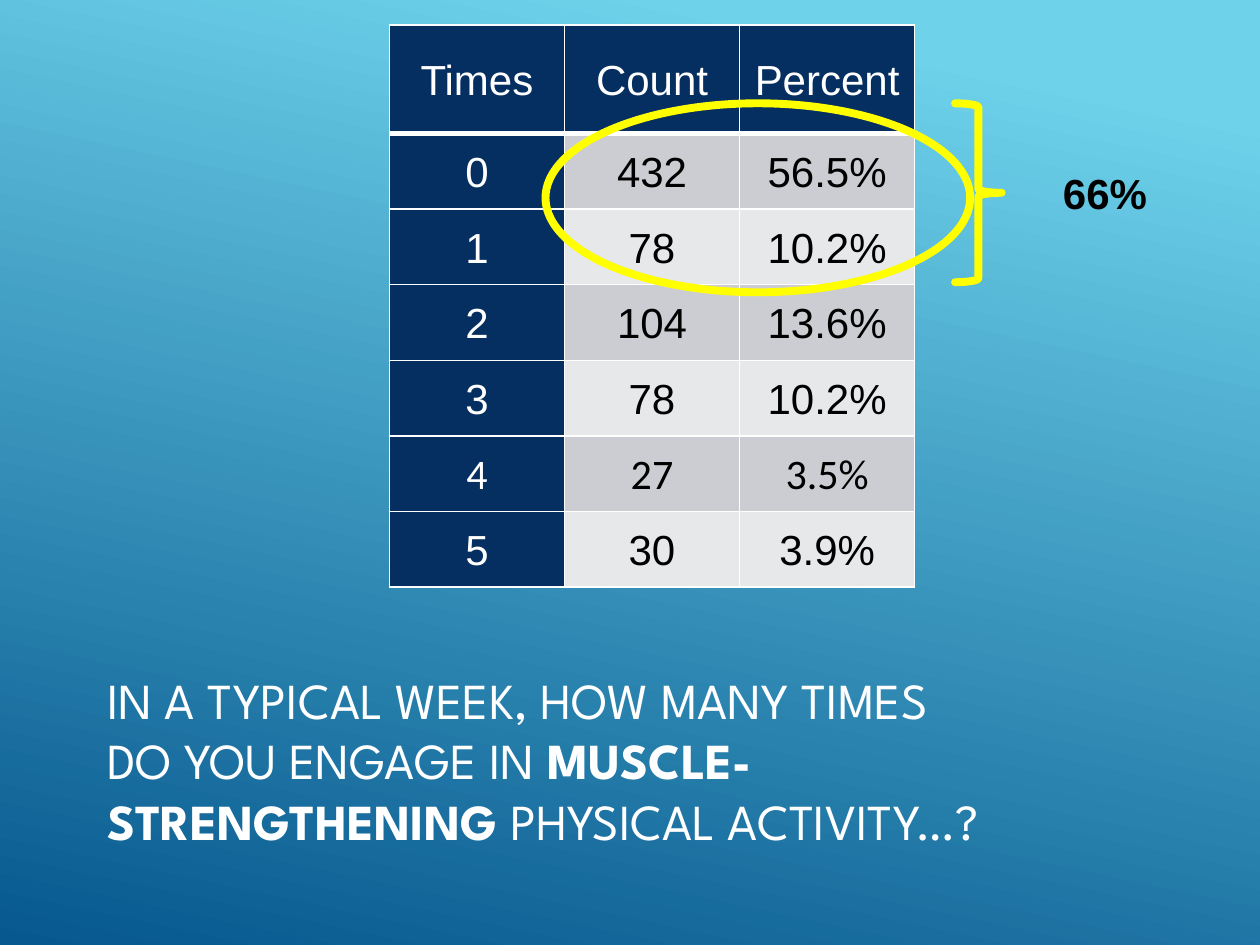
from lxml import etree
from pptx import Presentation
from pptx import util as u
from pptx.dml.color import RGBColor
from pptx.enum import shapes, text
from pptx.oxml.ns import qn

COLORS = {
    "sky": "6ED2EB", "deep": "06588E", "navy": "052F61", "white": "FFFFFF",
    "black": "000000", "band_dark": "CCCDD2", "band_light": "E7E8EA",
    "yellow": "FFFF00",
}


def add_span(para, words, size, font, color, bold=False):
    span = para.add_run()
    span.text = words
    span.font.size = u.Pt(size)
    span.font.name = font
    span.font.bold = bold
    span.font.color.rgb = RGBColor.from_string(COLORS[color])


def add_borders(cell, bottom_width):
    """Draw white rules on all four sides, placed before the cell's fill."""
    properties = cell._tc.get_or_add_tcPr()
    for index, side in enumerate(("lnL", "lnR", "lnT", "lnB")):
        width = bottom_width if side == "lnB" else 1
        line = etree.Element(qn(f"a:{side}"), w=str(u.Pt(width)))
        fill = etree.SubElement(line, qn("a:solidFill"))
        etree.SubElement(fill, qn("a:srgbClr"), val=COLORS["white"])
        properties.insert(index, line)


deck = Presentation()
deck.slide_width, deck.slide_height = u.Inches(10), u.Inches(7.5)
page = deck.slides.add_slide(deck.slide_layouts[5])

# Background
backdrop = page.background.fill
backdrop.gradient()
backdrop.gradient_angle = 360 - 102
for stop, position, color in zip(backdrop.gradient_stops, (0.1, 1), ("sky", "deep")):
    stop.position = position
    stop.color.rgb = RGBColor.from_string(COLORS[color])

# Question
title = page.shapes.title
title.left, title.top = u.Inches(0.75), u.Inches(5.41)
title.width, title.height = u.Inches(7.17), u.Inches(1.67)
frame = title.text_frame
frame.word_wrap = True
frame.auto_size = text.MSO_AUTO_SIZE.NONE
frame.vertical_anchor = text.MSO_ANCHOR.MIDDLE
frame.margin_bottom = u.Inches(0.48)
para = frame.paragraphs[0]
para.alignment = text.PP_ALIGN.LEFT
for words, bold in (
    ("IN A TYPICAL WEEK, HOW MANY TIMES DO YOU ENGAGE IN ", False),
    ("MUSCLE-STRENGTHENING", True),
    (" PHYSICAL ACTIVITY…?", False),
):
    add_span(para, words, 28.8, "League Spartan", "white", bold)

# Answers
answers = [
    ("Times", "Count", "Percent"),
    ("0", "432", "56.5%"),
    ("1", "78", "10.2%"),
    ("2", "104", "13.6%"),
    ("3", "78", "10.2%"),
    ("4", "27", "3.5%"),
    ("5", "30", "3.9%"),
]
table = page.shapes.add_table(
    len(answers), 3, u.Inches(3.09), u.Inches(0.2), u.Inches(4.18), u.Inches(4.46)
).table
for column in table.columns:
    column.width = u.Inches(1.39)
for r, answer in enumerate(answers):
    table.rows[r].height = u.Inches(0.6 if r else 0.86)
    font = "Calibri" if answer[0] == "4" else "Arial"
    for c, words in enumerate(answer):
        cell = table.cell(r, c)
        is_heading = r == 0 or c == 0
        band = "band_dark" if r % 2 else "band_light"
        cell.fill.solid()
        cell.fill.fore_color.rgb = RGBColor.from_string(
            COLORS["navy" if is_heading else band])
        add_borders(cell, 1 if r else 3)
        cell.vertical_anchor = text.MSO_ANCHOR.MIDDLE
        cell.margin_left = cell.margin_right = u.Inches(0.06)
        cell.margin_top = cell.margin_bottom = 0
        para = cell.text_frame.paragraphs[0]
        para.alignment = text.PP_ALIGN.CENTER
        para.line_spacing = 1.07
        add_span(para, words, 24, font, "white" if is_heading else "black")

# Highlight of the first two answers
for kind, left, width, height in (
    (shapes.MSO_SHAPE.OVAL, 4.33, 3.37, 1.5),
    (shapes.MSO_SHAPE.RIGHT_BRACE, 7.58, 0.37, 1.42),
):
    mark = page.shapes.add_shape(
        kind, u.Inches(left), u.Inches(0.82), u.Inches(width), u.Inches(height))
    mark.shadow.inherit = False
    mark.fill.background()
    mark.line.color.rgb = RGBColor.from_string(COLORS["yellow"])
    mark.line.width = u.Pt(4.5)
    mark._element.spPr.find(qn("a:ln")).set("cap", "rnd")

# Combined share
share = page.shapes.add_textbox(
    u.Inches(8.26), u.Inches(1.34), u.Inches(1.02), u.Inches(0.44))
share.text_frame.word_wrap = True
share.text_frame.auto_size = text.MSO_AUTO_SIZE.SHAPE_TO_FIT_TEXT
para = share.text_frame.paragraphs[0]
para.alignment = text.PP_ALIGN.CENTER
para.line_spacing = 0.85
add_span(para, "66%", 24, "Arial", "black", True)

deck.save("out.pptx")
